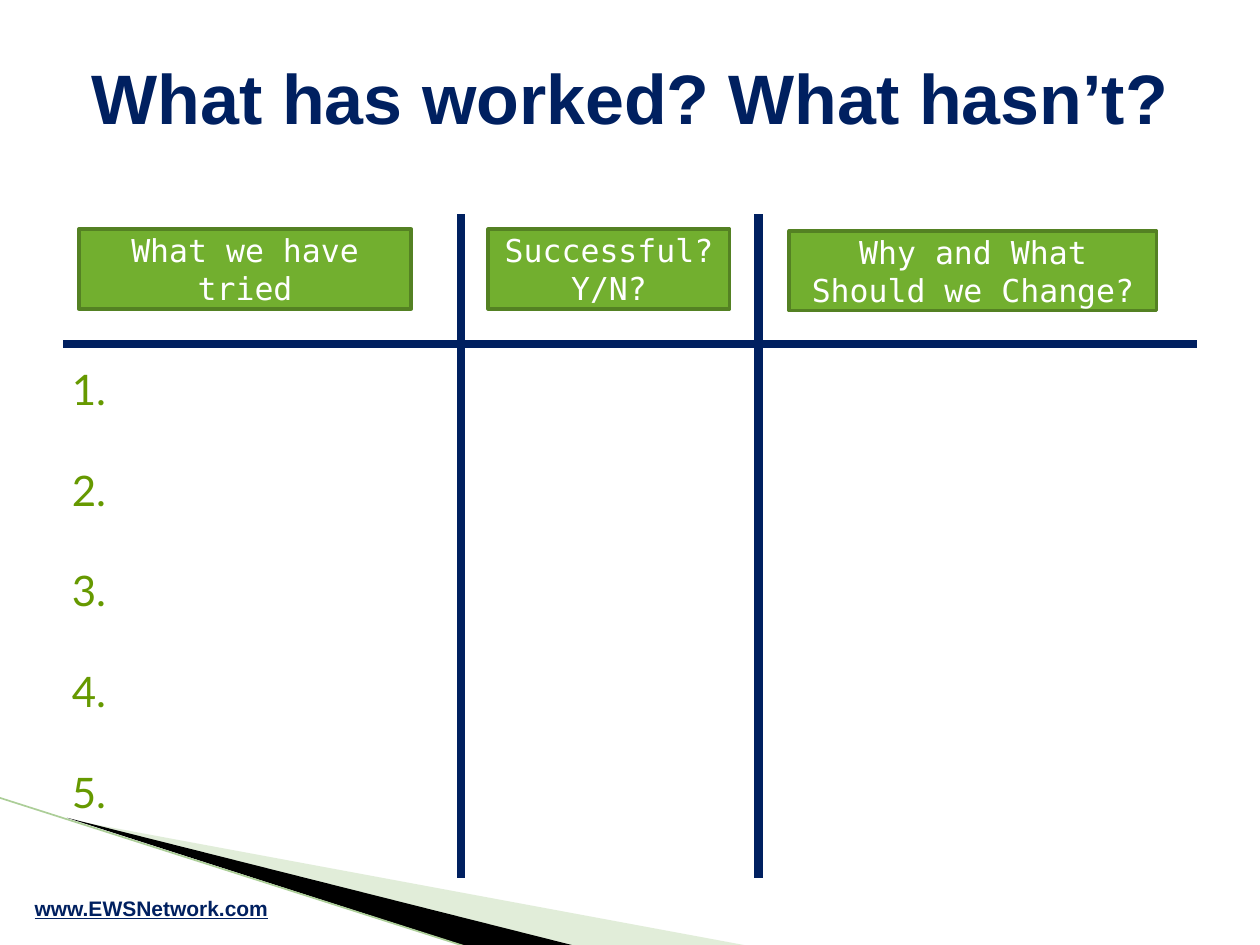
from lxml import etree
from pptx import Presentation
from pptx.dml.color import RGBColor
from pptx.enum import shapes, text
from pptx.oxml import ns
from pptx.util import Pt

NAVY = RGBColor(0x00, 0x20, 0x60)
WHITE = RGBColor(0xFF, 0xFF, 0xFF)
BLACK = RGBColor(0x00, 0x00, 0x00)
LABEL_GREEN = RGBColor(0x72, 0xAF, 0x2F)
LABEL_EDGE = RGBColor(0x54, 0x81, 0x23)
NUMBER_GREEN = RGBColor(0x66, 0x99, 0x00)
PALE_GREEN = RGBColor(0xB4, 0xD3, 0xA1)
EDGE_GREEN = RGBColor(0xAC, 0xCE, 0x98)


def write(shape, lines, *, font, size, color, bold=False, underline=False,
          align=text.PP_ALIGN.CENTER, anchor=text.MSO_ANCHOR.TOP, gap=0):
    """Fill a shape with one paragraph per line, gap points apart."""
    frame = shape.text_frame
    frame.word_wrap = True
    frame.auto_size = text.MSO_AUTO_SIZE.NONE
    frame.vertical_anchor = anchor
    for index, line in enumerate(lines):
        para = frame.add_paragraph() if index else frame.paragraphs[0]
        para.alignment = align
        para.space_before = Pt(gap if index else 0)
        span = para.add_run()
        span.text = line
        span.font.name = font
        span.font.size = Pt(size)
        span.font.color.rgb = color
        span.font.bold = bold
        span.font.underline = underline


def add_title(page, words):
    title = page.shapes.title
    title.left, title.top, title.width, title.height = Pt(0), Pt(10), Pt(720), Pt(90)
    write(title, [words], font="Arial", size=40, color=NAVY, bold=True,
          anchor=text.MSO_ANCHOR.MIDDLE)


def add_text(page, left, top, width, height, lines, **style):
    box = page.shapes.add_textbox(Pt(left), Pt(top), Pt(width), Pt(height))
    write(box, lines, **style)


def add_line(page, x1, y1, x2, y2, color, weight):
    line = page.shapes.add_connector(
        shapes.MSO_CONNECTOR.STRAIGHT, Pt(x1), Pt(y1), Pt(x2), Pt(y2))
    line.line.color.rgb = color
    line.line.width = Pt(weight)
    etree.SubElement(line._element.spPr, ns.qn("a:effectLst"))


def add_wedge(page, points, color, opacity=100):
    (start, *rest) = [(Pt(x), Pt(y)) for x, y in points]
    builder = page.shapes.build_freeform(*start)
    builder.add_line_segments(rest, close=True)
    wedge = builder.convert_to_shape()
    wedge.shadow.inherit = False
    wedge.fill.solid()
    wedge.fill.fore_color.rgb = color
    wedge.line.fill.background()
    if opacity < 100:
        shade = wedge._element.spPr.find(".//" + ns.qn("a:srgbClr"))
        etree.SubElement(shade, ns.qn("a:alpha"), val=str(opacity * 1000))


def add_label(page, left, top, width, words):
    label = page.shapes.add_shape(
        shapes.MSO_SHAPE.RECTANGLE, Pt(left), Pt(top), Pt(width), Pt(45.5))
    label.shadow.inherit = False
    label.fill.solid()
    label.fill.fore_color.rgb = LABEL_GREEN
    label.line.color.rgb = LABEL_EDGE
    label.line.width = Pt(2)
    write(label, [words], font="DejaVu Sans Mono", size=18, color=WHITE,
          anchor=text.MSO_ANCHOR.MIDDLE)


def main():
    deck = Presentation()
    deck.slide_width, deck.slide_height = Pt(720), Pt(540)
    page = deck.slides.add_slide(deck.slide_layouts[5])

    add_wedge(page, [(39.6, 468.4), (428.4, 540.6), (328.4, 540.6)], PALE_GREEN, opacity=40)
    add_wedge(page, [(38.2, 467.3), (329, 540.6), (267.8, 541.2)], BLACK)
    add_line(page, -0.5, 455.8, 267.1, 541.2, EDGE_GREEN, 0.95)

    add_title(page, "What has worked? What hasn’t?")
    add_text(page, 0, 508, 173, 22, ["www.EWSNetwork.com"], font="Arial", size=12,
             color=NAVY, bold=True, underline=True)

    add_line(page, 36, 196.5, 684, 196.5, NAVY, 5)
    for x in (263.5, 433.5):
        add_line(page, x, 122.4, x, 501.8, NAVY, 5)

    for left, top, width, words in (
        (45, 131, 190, "What we have tried"),
        (279, 131, 138, "Successful? Y/N?"),
        (451, 132, 210, "Why and What Should we Change?"),
    ):
        add_label(page, left, top, width, words)

    add_text(page, 34, 204, 310, 298, [f"{number}." for number in range(1, 6)],
             font="Lato", size=24, color=NUMBER_GREEN, align=text.PP_ALIGN.LEFT, gap=28.8)

    deck.save("out.pptx")


if __name__ == "__main__":
    main()
